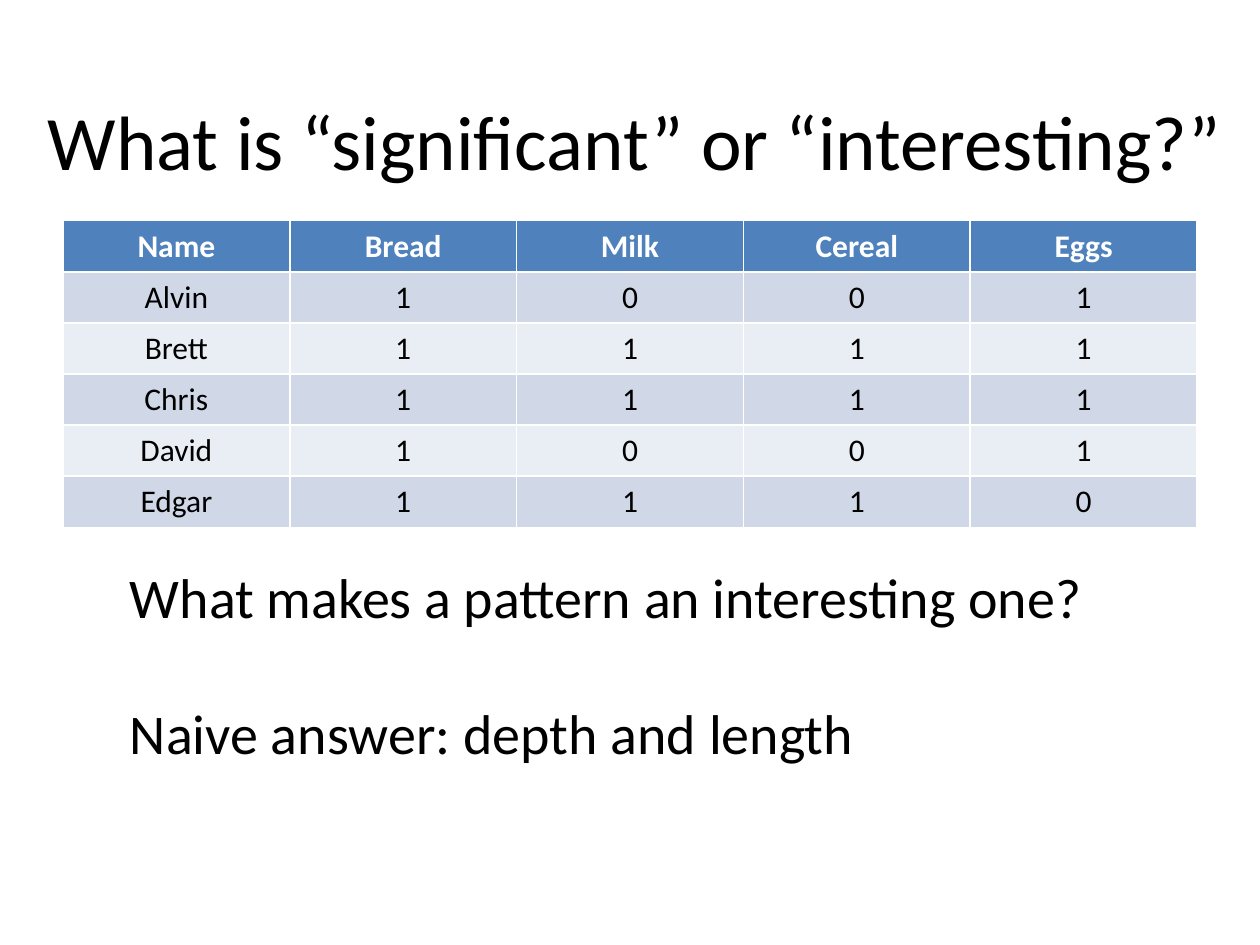
from dataclasses import dataclass

from pptx import Presentation as Deck
from pptx.dml.color import RGBColor as Rgb
from pptx.enum.text import MSO_ANCHOR as Anchor, MSO_AUTO_SIZE as Fit, PP_ALIGN as Align
from pptx.util import Cm, Pt

FONT = "Calibri"
BLACK = "000000"
WHITE = "FFFFFF"
BLUE = "4F81BD"
BANDS = ("D0D8E8", "E9EDF4")


@dataclass
class Box:
    left: float
    top: float
    width: float
    height: float

    def place(self) -> tuple:
        return Cm(self.left), Cm(self.top), Cm(self.width), Cm(self.height)


@dataclass
class Row:
    cells: tuple
    fill: str
    ink: str = BLACK
    bold: bool = False


def color(code: str) -> Rgb:
    return Rgb.from_string(code)


def style(para, size: int, ink: str = BLACK, bold: bool = False, align=Align.LEFT) -> None:
    para.alignment = align
    for run in para.runs:
        font = run.font
        font.name = FONT
        font.size = Pt(size)
        font.bold = bold
        font.color.rgb = color(ink)


def add_title(slide, text: str, box: Box) -> None:
    title = slide.shapes.title
    title.left, title.top, title.width, title.height = box.place()
    frame = title.text_frame
    frame.text = text
    frame.word_wrap = True
    frame.auto_size = Fit.NONE
    frame.vertical_anchor = Anchor.MIDDLE
    style(frame.paragraphs[0], 44, align=Align.CENTER)


def add_grid(slide, rows: list[Row], box: Box) -> None:
    count = len(rows[0].cells)
    table = slide.shapes.add_table(len(rows), count, *box.place()).table
    for r, row in enumerate(rows):
        for c, text in enumerate(row.cells):
            cell = table.cell(r, c)
            cell.text = text
            cell.fill.solid()
            cell.fill.fore_color.rgb = color(row.fill)
            style(cell.text_frame.paragraphs[0], 18, row.ink, row.bold, Align.CENTER)


def add_notes(slide, lines: list[str], box: Box) -> None:
    frame = slide.shapes.add_textbox(*box.place()).text_frame
    frame.word_wrap = True
    frame.auto_size = Fit.SHAPE_TO_FIT_TEXT
    frame.margin_left = Cm(0.5)
    for i, line in enumerate(lines):
        para = frame.add_paragraph() if i else frame.paragraphs[0]
        para.text = line
        para.space_before = Pt(39 if i else 0)
        style(para, 32)


def main() -> None:
    deck = Deck()
    deck.slide_width, deck.slide_height = Cm(25.4), Cm(19.05)
    slide = deck.slides.add_slide(deck.slide_layouts[5])
    add_title(slide, "What is “significant” or “interesting?”", Box(0.64, 0.76, 24.33, 4.11))

    people = {"Alvin": "1001", "Brett": "1111", "Chris": "1111", "David": "1001", "Edgar": "1110"}
    rows = [Row(("Name", "Bread", "Milk", "Cereal", "Eggs"), BLUE, WHITE, True)]
    for i, (name, marks) in enumerate(people.items()):
        rows.append(Row((name, *marks), BANDS[i % 2]))
    add_grid(slide, rows, Box(1.27, 4.45, 22.86, 6.18))

    lines = ["What makes a pattern an interesting one?", "Naive answer: depth and length"]
    add_notes(slide, lines, Box(2.12, 11.22, 22.65, 4.37))
    deck.save("out.pptx")


if __name__ == "__main__":
    main()
